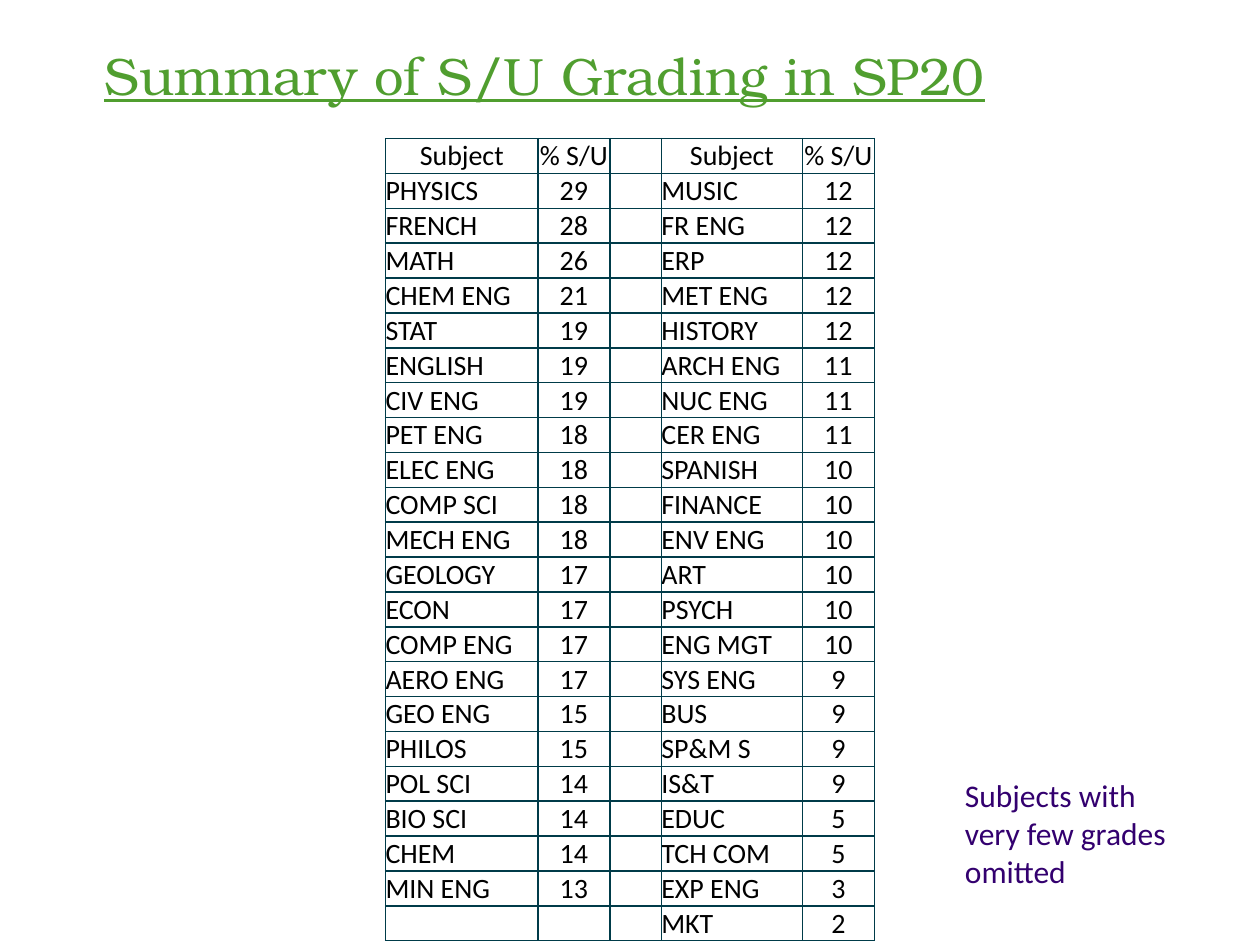
from itertools import zip_longest

from lxml.etree import SubElement
from pptx import Presentation
from pptx.dml.color import RGBColor
from pptx.enum.text import MSO_ANCHOR, MSO_AUTO_SIZE, PP_ALIGN
from pptx.oxml.ns import qn
from pptx.util import Inches, Pt

BODY = "Calibri"
EDGE = "003B49"
HEAD = ("Subject", "% S/U")
LEFT = [
    ("PHYSICS", 29), ("FRENCH", 28), ("MATH", 26), ("CHEM ENG", 21),
    ("STAT", 19), ("ENGLISH", 19), ("CIV ENG", 19), ("PET ENG", 18),
    ("ELEC ENG", 18), ("COMP SCI", 18), ("MECH ENG", 18), ("GEOLOGY", 17),
    ("ECON", 17), ("COMP ENG", 17), ("AERO ENG", 17), ("GEO ENG", 15),
    ("PHILOS", 15), ("POL SCI", 14), ("BIO SCI", 14), ("CHEM", 14),
    ("MIN ENG", 13),
]
RIGHT = [
    ("MUSIC", 12), ("FR ENG", 12), ("ERP", 12), ("MET ENG", 12),
    ("HISTORY", 12), ("ARCH ENG", 11), ("NUC ENG", 11), ("CER ENG", 11),
    ("SPANISH", 10), ("FINANCE", 10), ("ENV ENG", 10), ("ART", 10),
    ("PSYCH", 10), ("ENG MGT", 10), ("SYS ENG", 9), ("BUS", 9),
    ("SP&M S", 9), ("IS&T", 9), ("EDUC", 5), ("TCH COM", 5),
    ("EXP ENG", 3), ("MKT", 2),
]
WIDTHS = (1.21, 0.57, 0.41, 1.12, 0.57)


def set_font(font, name, size, color):
    font.name = name
    font.size = Pt(size)
    font.color.rgb = RGBColor.from_string(color)


def add_text(slide, box, lines, name, size, color):
    shape = slide.shapes.add_textbox(*map(Inches, box))
    frame = shape.text_frame
    frame.text = "\n".join(lines)
    for para in frame.paragraphs:
        set_font(para.font, name, size, color)
    return frame


def add_edges(cell):
    props = cell._tc.get_or_add_tcPr()
    for index, side in enumerate(("lnL", "lnR", "lnT", "lnB")):
        line = SubElement(props, qn(f"a:{side}"), w=str(Pt(1)))
        fill = SubElement(line, qn("a:solidFill"))
        SubElement(fill, qn("a:srgbClr"), val=EDGE)
        # Borders come before the fill
        props.remove(line)
        props.insert(index, line)


def fill_cell(cell, value, center):
    cell.margin_left = cell.margin_right = 0
    cell.margin_top = cell.margin_bottom = 0
    cell.vertical_anchor = MSO_ANCHOR.BOTTOM
    cell.fill.background()
    cell.text = str(value)
    para = cell.text_frame.paragraphs[0]
    para.alignment = PP_ALIGN.CENTER if center else PP_ALIGN.LEFT
    set_font(para.font, BODY, 16, "000000")
    add_edges(cell)


def add_grades(slide):
    pairs = zip_longest([HEAD] + LEFT, [HEAD] + RIGHT, fillvalue=("", ""))
    rows = [(*left, "", *right) for left, right in pairs]
    box = (3.06, 1.1, sum(WIDTHS), 6.37)
    table = slide.shapes.add_table(
        len(rows), len(WIDTHS), *map(Inches, box)).table
    table.first_row = table.horz_banding = False
    for column, width in zip(table.columns, WIDTHS):
        column.width = Inches(width)
    for r, row in enumerate(rows):
        for c, value in enumerate(row):
            fill_cell(table.cell(r, c), value, r == 0 or c in (1, 4))


def main():
    deck = Presentation()
    deck.slide_width, deck.slide_height = Inches(10), Inches(7.5)
    slide = deck.slides.add_slide(deck.slide_layouts[6])

    # Title
    title = add_text(slide, (0.73, 0.35, 8.95, 0.63),
                     ["Summary of S/U Grading in SP20"],
                     "TeX Gyre Bonum", 30, "509E2F")
    title.word_wrap = True
    title.paragraphs[0].font.underline = True
    title.paragraphs[0].line_spacing = 0.9

    # Grade table
    add_grades(slide)

    # Side note
    note = add_text(slide, (7.56, 6.11, 1.81, 1.01),
                    ["Subjects with", "very few grades", "omitted"],
                    BODY, 18, "33006F")
    note.word_wrap = False
    note.auto_size = MSO_AUTO_SIZE.SHAPE_TO_FIT_TEXT

    deck.save("out.pptx")


if __name__ == "__main__":
    main()
